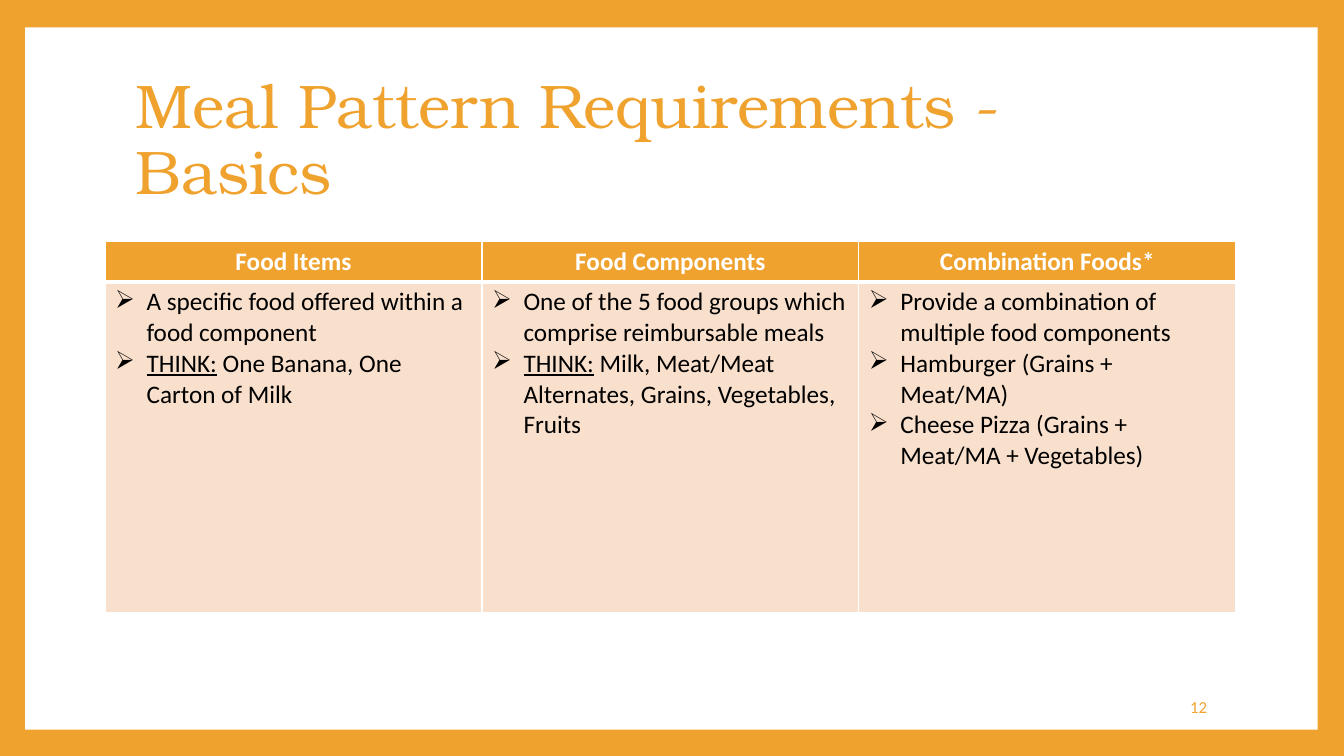
from lxml import etree
from pptx import Presentation
from pptx.dml.color import RGBColor
from pptx.enum.shapes import MSO_SHAPE
from pptx.enum.text import MSO_ANCHOR, PP_ALIGN
from pptx.oxml.ns import qn
from pptx.util import Emu, Pt

EMU_PER_PX = 9525
ORANGE = RGBColor(0xF0, 0xA2, 0x2E)
PEACH = RGBColor(0xF9, 0xE0, 0xCD)
WHITE = RGBColor(0xFF, 0xFF, 0xFF)
BLACK = RGBColor(0, 0, 0)
TITLE_FONT = "TeX Gyre Bonum"
BODY_FONT = "Calibri"
RECTANGLE = MSO_SHAPE.RECTANGLE
MIDDLE = MSO_ANCHOR.MIDDLE
LEFT, CENTER, RIGHT = PP_ALIGN.LEFT, PP_ALIGN.CENTER, PP_ALIGN.RIGHT

COLUMN_WIDTH = 359
HEADER_HEIGHT = 38
BODY_HEIGHT = 315
BULLET_INDENT = 30
THIN, THICK = 1, 3

# Each bullet is an underlined lead and the plain text after it.
COLUMNS = [
    ("Food Items", [
        ("", "A specific food offered within a food component"),
        ("THINK:", " One Banana, One Carton of Milk"),
    ]),
    ("Food Components", [
        ("", "One of the 5 food groups which comprise reimbursable meals"),
        ("THINK:", " Milk, Meat/Meat Alternates, Grains, Vegetables, Fruits"),
    ]),
    ("Combination Foods*", [
        ("", "Provide a combination of multiple food components"),
        ("", "Hamburger (Grains + Meat/MA)"),
        ("", "Cheese Pizza (Grains + Meat/MA + Vegetables)"),
    ]),
]


def px(length):
    return Emu(length * EMU_PER_PX)


def style(para, font_name, size, color, bold=False, align=LEFT):
    para.alignment = align
    font = para.font
    font.name, font.size, font.bold = font_name, Pt(size), bold
    font.color.rgb = color


def add_panel(page, left, top, width, height):
    panel = page.shapes.add_shape(RECTANGLE, px(left), px(top), px(width), px(height))
    panel.shadow.inherit = False
    panel.fill.solid()
    panel.fill.fore_color.rgb = WHITE
    panel.line.fill.background()


def add_text(page, left, top, width, height, text, font_name, size, align=LEFT):
    box = page.shapes.add_textbox(px(left), px(top), px(width), px(height))
    frame = box.text_frame
    frame.word_wrap = True
    frame.vertical_anchor = MIDDLE
    para = frame.paragraphs[0]
    para.text = text
    style(para, font_name, size, ORANGE, align=align)
    return para


def set_bullet(para):
    properties = para._p.get_or_add_pPr()
    properties.set("marL", str(px(BULLET_INDENT)))
    properties.set("indent", str(-px(BULLET_INDENT)))
    etree.SubElement(properties, qn("a:buChar"), char="➢")


def set_cell(cell, fill, top, bottom):
    """Fill the cell and draw its white borders, with top and bottom widths in points."""
    cell.fill.solid()
    cell.fill.fore_color.rgb = fill
    properties = cell._tc.get_or_add_tcPr()
    widths = {"a:lnL": THIN, "a:lnR": THIN, "a:lnT": top, "a:lnB": bottom}
    for position, (side, width) in enumerate(widths.items()):
        border = etree.Element(qn(side), w=str(Pt(width)))
        paint = etree.SubElement(border, qn("a:solidFill"))
        etree.SubElement(paint, qn("a:srgbClr"), val=str(WHITE))
        properties.insert(position, border)


def fill_header(cell, heading):
    set_cell(cell, ORANGE, THIN, THICK)
    para = cell.text_frame.paragraphs[0]
    para.text = heading
    style(para, BODY_FONT, 18, WHITE, bold=True, align=CENTER)


def fill_body(cell, bullets):
    set_cell(cell, PEACH, THICK, THIN)
    frame = cell.text_frame
    for index, (lead, text) in enumerate(bullets):
        para = frame.add_paragraph() if index else frame.paragraphs[0]
        set_bullet(para)
        style(para, BODY_FONT, 18, BLACK)
        if lead:
            span = para.add_run()
            span.text = lead
            span.font.underline = True
        para.add_run().text = text


def add_food_table(page, left, top):
    table = page.shapes.add_table(
        2, len(COLUMNS), px(left), px(top),
        px(COLUMN_WIDTH * len(COLUMNS)), px(HEADER_HEIGHT + BODY_HEIGHT)).table
    table.rows[0].height = px(HEADER_HEIGHT)
    table.rows[1].height = px(BODY_HEIGHT)
    for index, (heading, bullets) in enumerate(COLUMNS):
        table.columns[index].width = px(COLUMN_WIDTH)
        fill_header(table.cell(0, index), heading)
        fill_body(table.cell(1, index), bullets)


def main():
    deck = Presentation()
    deck.slide_width, deck.slide_height = px(1280), px(720)
    page = deck.slides.add_slide(deck.slide_layouts[6])
    page.background.fill.solid()
    page.background.fill.fore_color.rgb = ORANGE

    add_panel(page, 24, 26, 1231, 669)
    title = add_text(page, 120, 64, 1037, 142,
                     "Meal Pattern Requirements - Basics", TITLE_FONT, 44)
    title.line_spacing = 0.9
    add_food_table(page, 100, 230)
    add_text(page, 979, 654, 180, 38, "12", BODY_FONT, 12, RIGHT)
    deck.save("out.pptx")


if __name__ == "__main__":
    main()
